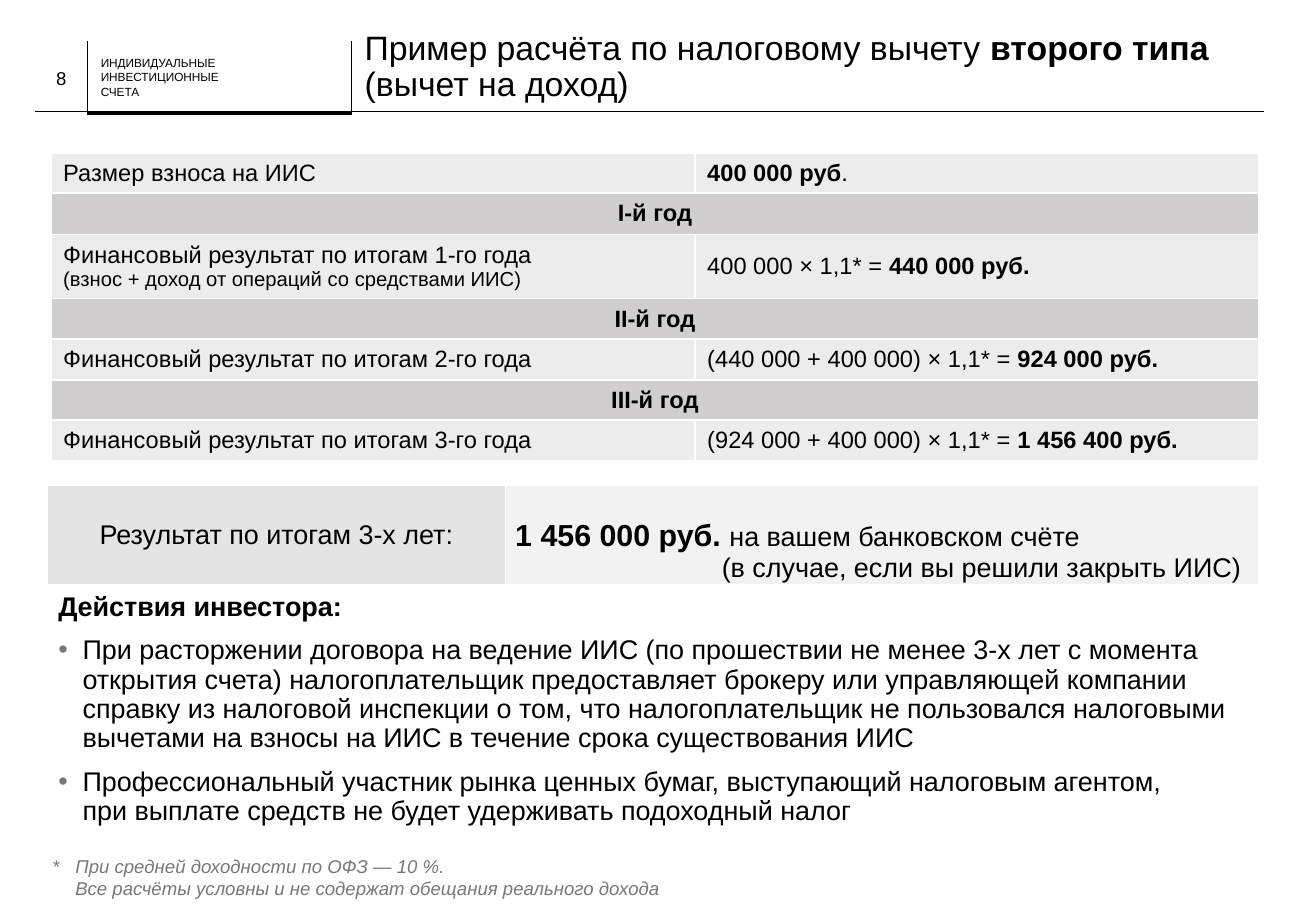
from lxml import etree
from pptx import Presentation
from pptx.dml.color import RGBColor
from pptx.enum.shapes import MSO_CONNECTOR
from pptx.enum.text import MSO_ANCHOR, MSO_AUTO_SIZE, PP_ALIGN
from pptx.oxml.ns import qn
from pptx.util import Pt

PX = 9144  # 100 px to the inch
STRAIGHT = MSO_CONNECTOR.STRAIGHT
TOP, MIDDLE, BOTTOM = MSO_ANCHOR.TOP, MSO_ANCHOR.MIDDLE, MSO_ANCHOR.BOTTOM
LEFT, CENTER = PP_ALIGN.LEFT, PP_ALIGN.CENTER
FONT = "Arial"
PLAIN_TABLE = "{2D5ABB26-0587-4C30-8999-92F81FD0307C}"
COLORS = {
    "text": "000000", "muted": "77777A", "border": "FFFFFF",
    "row": "ECECEC", "year": "D0CECE", "result": "E4E4E4", "amount": "F2F2F2",
}


def write(para, text, size, color="text", italic=False, align=LEFT, spacing=None, hang=0):
    """Add text to a paragraph; parts between ** are bold, a newline is a line break."""
    para.alignment = align
    if spacing:
        para.line_spacing = spacing
    if hang:
        props = para._p.get_or_add_pPr()
        props.set("marL", str(hang * PX))
        props.set("indent", str(-hang * PX))
    for part_no, part in enumerate(text.split("**")):
        for line_no, line in enumerate(part.split("\n")):
            if line_no:
                para.add_line_break()
            if line:
                span = para.add_run()
                span.text = line
                span.font.name = FONT
                span.font.size = Pt(size)
                span.font.bold = part_no % 2 == 1
                span.font.italic = italic
                span.font.color.rgb = RGBColor.from_string(COLORS[color])


def add_plain_table(left, top, widths, heights, sides):
    """Add an unstyled table with white borders on the given cell sides."""
    frame = page.shapes.add_table(len(heights), len(widths), left * PX, top * PX,
                                  sum(widths) * PX, sum(heights) * PX)
    table = frame.table
    table.first_row = table.horz_banding = False
    frame.element.xpath(".//a:tableStyleId")[0].text = PLAIN_TABLE
    for column, width in zip(table.columns, widths):
        column.width = width * PX
    for row, height in zip(table.rows, heights):
        row.height = height * PX
    for cell_xml in frame.element.iter(qn("a:tc")):
        props = cell_xml.get_or_add_tcPr()
        for position, side in enumerate(sides):
            border = etree.Element(qn(f"a:ln{side}"), w=str(Pt(1)))
            fill = etree.SubElement(border, qn("a:solidFill"))
            etree.SubElement(fill, qn("a:srgbClr"), val=COLORS["border"])
            props.insert(position, border)
    return table


deck = Presentation()
deck.slide_width, deck.slide_height = 1083 * PX, 750 * PX
page = deck.slides.add_slide(deck.slide_layouts[5])

# Header rules
for x1, y1, x2, y2, weight in [
    (72, 92, 29, 92, 0.25),
    (290, 93, 72, 93, 2.25),
    (1040, 92, 288, 92, 0.25),
    (72, 93, 72, 34, 0.25),
    (289, 93, 289, 34, 0.25),
]:
    rule = page.shapes.add_connector(STRAIGHT, x1 * PX, y1 * PX, x2 * PX, y2 * PX)
    rule.line.width = Pt(weight)
    rule.line.color.rgb = RGBColor.from_string(COLORS["text"])
    etree.SubElement(rule.element.spPr, qn("a:effectLst"))

# Title and text boxes
title = page.shapes.title
title.left, title.top, title.width, title.height = 300 * PX, 21 * PX, 741 * PX, 69 * PX
section = page.shapes.add_textbox(83 * PX, 46 * PX, 203 * PX, 35 * PX)
number = page.shapes.add_textbox(29 * PX, 44 * PX, 43 * PX, 40 * PX)
actions = page.shapes.add_textbox(48 * PX, 488 * PX, 994 * PX, 218 * PX)
note = page.shapes.add_textbox(43 * PX, 704 * PX, 784 * PX, 37 * PX)
for box, anchor in [(title, MIDDLE), (section, MIDDLE), (number, MIDDLE),
                    (actions, TOP), (note, TOP)]:
    frame = box.text_frame
    frame.word_wrap = True
    frame.auto_size = MSO_AUTO_SIZE.NONE
    frame.vertical_anchor = anchor
    frame.margin_left = frame.margin_right = frame.margin_top = frame.margin_bottom = 0

heading = title.text_frame
write(heading.paragraphs[0], "Пример расчёта по налоговому вычету **второго типа**", 20, spacing=0.9)
write(heading.add_paragraph(), "(вычет на доход)", 20, spacing=0.9)
write(section.text_frame.paragraphs[0], "ИНДИВИДУАЛЬНЫЕ\nИНВЕСТИЦИОННЫЕ\nСЧЕТА", 7)
write(number.text_frame.paragraphs[0], "8", 11, align=CENTER)
write(note.text_frame.paragraphs[0],
      "*\tПри средней доходности по ОФЗ — 10 %.\n"
      "Все расчёты условны и не содержат обещания реального дохода",
      11, color="muted", italic=True, hang=19)

# Investor actions
write(actions.text_frame.paragraphs[0], "**Действия инвестора:**", 16, spacing=0.9)
for action in [
    "При расторжении договора на ведение ИИС (по прошествии не менее 3-х лет с момента "
    "открытия счета) налогоплательщик предоставляет брокеру или управляющей компании "
    "справку из налоговой инспекции о том, что налогоплательщик не пользовался налоговыми "
    "вычетами на взносы на ИИС в течение срока существования ИИС",
    "Профессиональный участник рынка ценных бумаг, выступающий налоговым агентом,\n"
    "при выплате средств не будет удерживать подоходный налог",
]:
    para = actions.text_frame.add_paragraph()
    write(para, action, 16, spacing=0.9, hang=20)
    para.space_before = Pt(8.8)
    props = para._p.get_or_add_pPr()
    bullet_color = etree.SubElement(props, qn("a:buClr"))
    etree.SubElement(bullet_color, qn("a:srgbClr"), val=COLORS["muted"])
    etree.SubElement(props, qn("a:buFont"), typeface=FONT)
    etree.SubElement(props, qn("a:buChar"), char="•")

# Yearly calculation: a row with one text is a year heading
calculation = [
    ("Размер взноса на ИИС", "**400 000 руб**."),
    ("**I-й год**",),
    ("Финансовый результат по итогам 1-го года\n", "400 000 × 1,1* = **440 000 руб.**"),
    ("**II-й год**",),
    ("Финансовый результат по итогам 2-го года", "(440 000 + 400 000) × 1,1* = **924 000 руб.**"),
    ("**III-й год**",),
    ("Финансовый результат по итогам 3-го года", "(924 000 + 400 000) × 1,1* = **1 456 400 руб.**"),
]
years = add_plain_table(42, 126, [530, 464], [33, 34, 53, 33, 34, 33, 33], "LRTB")
for row_no, texts in enumerate(calculation):
    is_year = len(texts) == 1
    if is_year:
        years.cell(row_no, 0).merge(years.cell(row_no, 1))
    for column_no, text in enumerate(texts):
        cell = years.cell(row_no, column_no)
        cell.vertical_anchor = MIDDLE
        cell.fill.solid()
        cell.fill.fore_color.rgb = RGBColor.from_string(COLORS["year" if is_year else "row"])
        write(cell.text_frame.paragraphs[0], text, 14, align=CENTER if is_year else LEFT)
write(years.cell(2, 0).text_frame.paragraphs[0], "(взнос + доход от операций со средствами ИИС)", 12)

# Three-year result
result = add_plain_table(39, 400, [377, 620], [55, 26], "LR")
result.cell(0, 0).merge(result.cell(1, 0))
for row_no, column_no, color, anchor, indent in [
    (0, 0, "result", MIDDLE, 0),
    (0, 1, "amount", BOTTOM, 8),
    (1, 1, "amount", MIDDLE, 178),
]:
    cell = result.cell(row_no, column_no)
    cell.vertical_anchor = anchor
    cell.margin_left = indent * PX
    cell.margin_right = cell.margin_top = cell.margin_bottom = 0
    cell.fill.solid()
    cell.fill.fore_color.rgb = RGBColor.from_string(COLORS[color])
write(result.cell(0, 0).text_frame.paragraphs[0], "Результат по итогам 3-х лет:", 16, align=CENTER)
amount = result.cell(0, 1).text_frame.paragraphs[0]
write(amount, "**1 456 000 руб. **", 18)
write(amount, "на вашем банковском счёте", 16)
write(result.cell(1, 1).text_frame.paragraphs[0], "(в случае, если вы решили закрыть ИИС)", 16)

deck.save("out.pptx")
